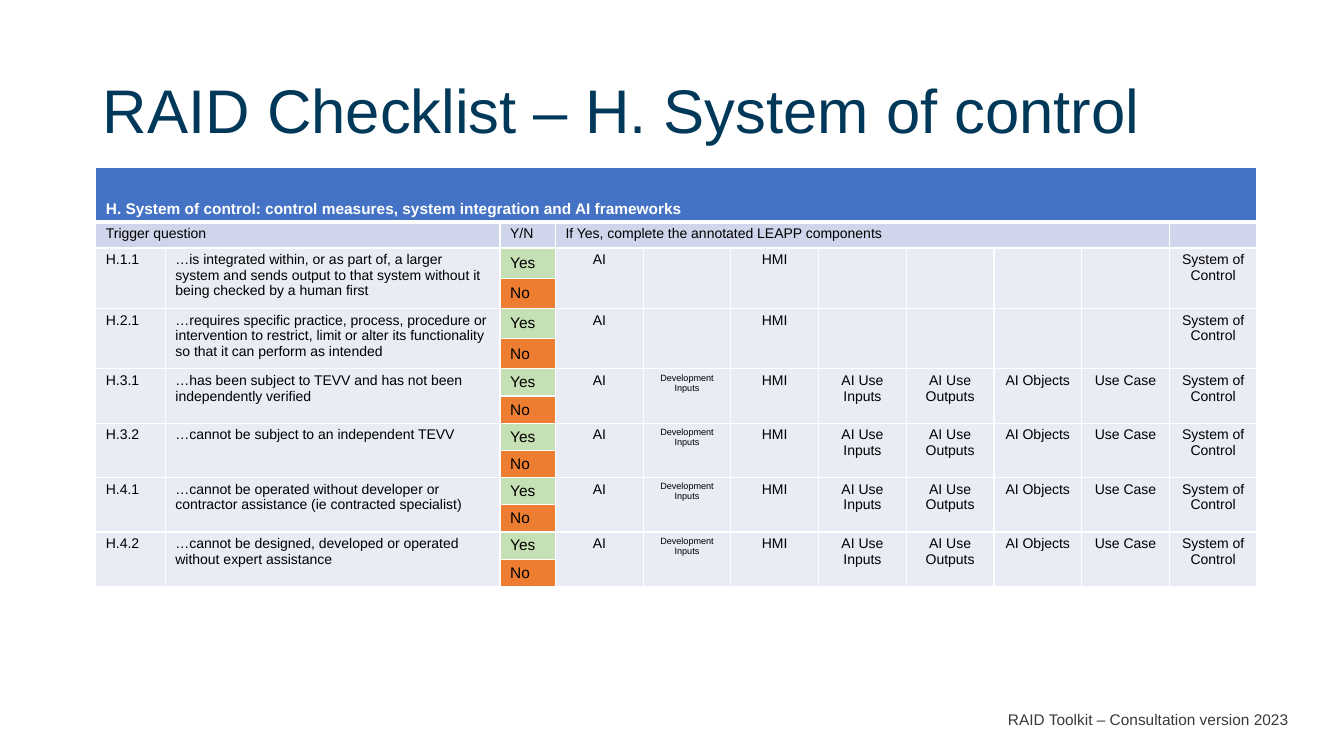
from lxml.etree import SubElement
from pptx import Presentation
from pptx.dml.color import RGBColor
from pptx.enum.text import MSO_ANCHOR, MSO_AUTO_SIZE, PP_ALIGN
from pptx.oxml.ns import qn
from pptx.util import Inches, Pt

HEX = {"title": "00385A", "foot": "3B3838", "head": "4472C4", "sub": "CFD5EA",
       "body": "E9EBF5", "yes": "C5E0B4", "no": "ED7D31",
       "white": "FFFFFF", "black": "000000"}
COLS = [0.69, 3.32, 0.55] + [0.87] * 8
ROWS = [0.54, 0.26] + [0.3] * 4 + [0.27] * 8
SOME = ["AI", "", "HMI", "", "", "", "", "System of Control"]
ALL = ["AI", "Development Inputs", "HMI", "AI Use Inputs", "AI Use Outputs",
       "AI Objects", "Use Case", "System of Control"]
ASKS = [
    ("H.1.1", "…is integrated within, or as part of, a larger system and sends "
     "output to that system without it being checked by a human first", SOME),
    ("H.2.1", "…requires specific practice, process, procedure or intervention to "
     "restrict, limit or alter its functionality so that it can perform as intended", SOME),
    ("H.3.1", "…has been subject to TEVV and has not been independently verified", ALL),
    ("H.3.2", "…cannot be subject to an independent TEVV", ALL),
    ("H.4.1", "…cannot be operated without developer or contractor assistance "
     "(ie contracted specialist)", ALL),
    ("H.4.2", "…cannot be designed, developed or operated without expert assistance", ALL),
]


def style(para, size, color, bold=False):
    for run in para.runs:
        font = run.font
        font.name, font.size, font.bold = "Arial", Pt(size), bold
        font.color.rgb = RGBColor.from_string(HEX[color])


def put(row, col, text, fill, size=10, color="black", bold=False,
        span=(1, 1), align=PP_ALIGN.LEFT, anchor=MSO_ANCHOR.TOP):
    """Fill one table cell, merged over span (rows, columns)."""
    cell = table.cell(row, col)
    if span != (1, 1):
        cell.merge(table.cell(row + span[0] - 1, col + span[1] - 1))
    cell.fill.solid()
    cell.fill.fore_color.rgb = RGBColor.from_string(HEX[fill])
    cell.vertical_anchor = anchor
    para = cell.text_frame.paragraphs[0]
    para.alignment = align
    if text:
        para.text = text
        style(para, size, color, bold)
    else:
        SubElement(para._p, qn("a:endParaRPr"), sz=str(size * 100))


prs = Presentation()
prs.slide_width, prs.slide_height = Inches(13.33), Inches(7.5)
slide = prs.slides.add_slide(prs.slide_layouts[5])

# Title
title = slide.shapes.title
title.left, title.top = Inches(0.92), Inches(0.4)
title.width, title.height = Inches(11.5), Inches(1.45)
frame = title.text_frame
frame.text = "RAID Checklist – H. System of control"
frame.vertical_anchor = MSO_ANCHOR.MIDDLE
para = frame.paragraphs[0]
para.alignment, para.line_spacing = PP_ALIGN.LEFT, 0.9
style(para, 44, "title")

# Table grid
table = slide.shapes.add_table(
    len(ROWS), len(COLS), Inches(0.95), Inches(1.66),
    Inches(sum(COLS)), Inches(sum(ROWS))).table
for col, width in zip(table.columns, COLS):
    col.width = Inches(width)
for row, height in zip(table.rows, ROWS):
    row.height = Inches(height)
for r in range(len(ROWS)):
    for c in range(len(COLS)):
        cell = table.cell(r, c)
        cell.margin_top = cell.margin_bottom = Inches(0.04)
        props = cell._tc.get_or_add_tcPr()
        for side in "LRTB":
            thick = (r, side) in [(0, "B"), (1, "T")]
            line = SubElement(props, qn("a:ln" + side), w=str(Pt(3 if thick else 1)))
            solid = SubElement(line, qn("a:solidFill"))
            SubElement(solid, qn("a:srgbClr"), val=HEX["white"])

# Table text
put(0, 0, "H. System of control: control measures, system integration and AI frameworks",
    "head", 11, "white", True, (1, 11), anchor=MSO_ANCHOR.BOTTOM)
put(1, 0, "Trigger question", "sub", span=(1, 2))
put(1, 2, "Y/N", "sub")
put(1, 3, "If Yes, complete the annotated LEAPP components", "sub", span=(1, 7))
put(1, 10, "", "sub")
for i, (code, ask, parts) in enumerate(ASKS):
    top = 2 + 2 * i
    put(top, 0, code, "body", span=(2, 1))
    put(top, 1, ask, "body", span=(2, 1))
    put(top, 2, "Yes", "yes", 11, anchor=MSO_ANCHOR.MIDDLE)
    put(top + 1, 2, "No", "no", 11, anchor=MSO_ANCHOR.MIDDLE)
    for c, part in enumerate(parts, 3):
        size = 6.5 if part == "Development Inputs" else 10
        put(top, c, part, "body", size, span=(2, 1), align=PP_ALIGN.CENTER)

# Footer
foot = slide.shapes.add_textbox(Inches(6.22), Inches(7), Inches(6.66), Inches(0.29))
frame = foot.text_frame
frame.word_wrap = True
frame.auto_size = MSO_AUTO_SIZE.SHAPE_TO_FIT_TEXT
frame.text = "RAID Toolkit – Consultation version 2023"
frame.paragraphs[0].alignment = PP_ALIGN.RIGHT
style(frame.paragraphs[0], 11, "foot")

prs.save("out.pptx")
